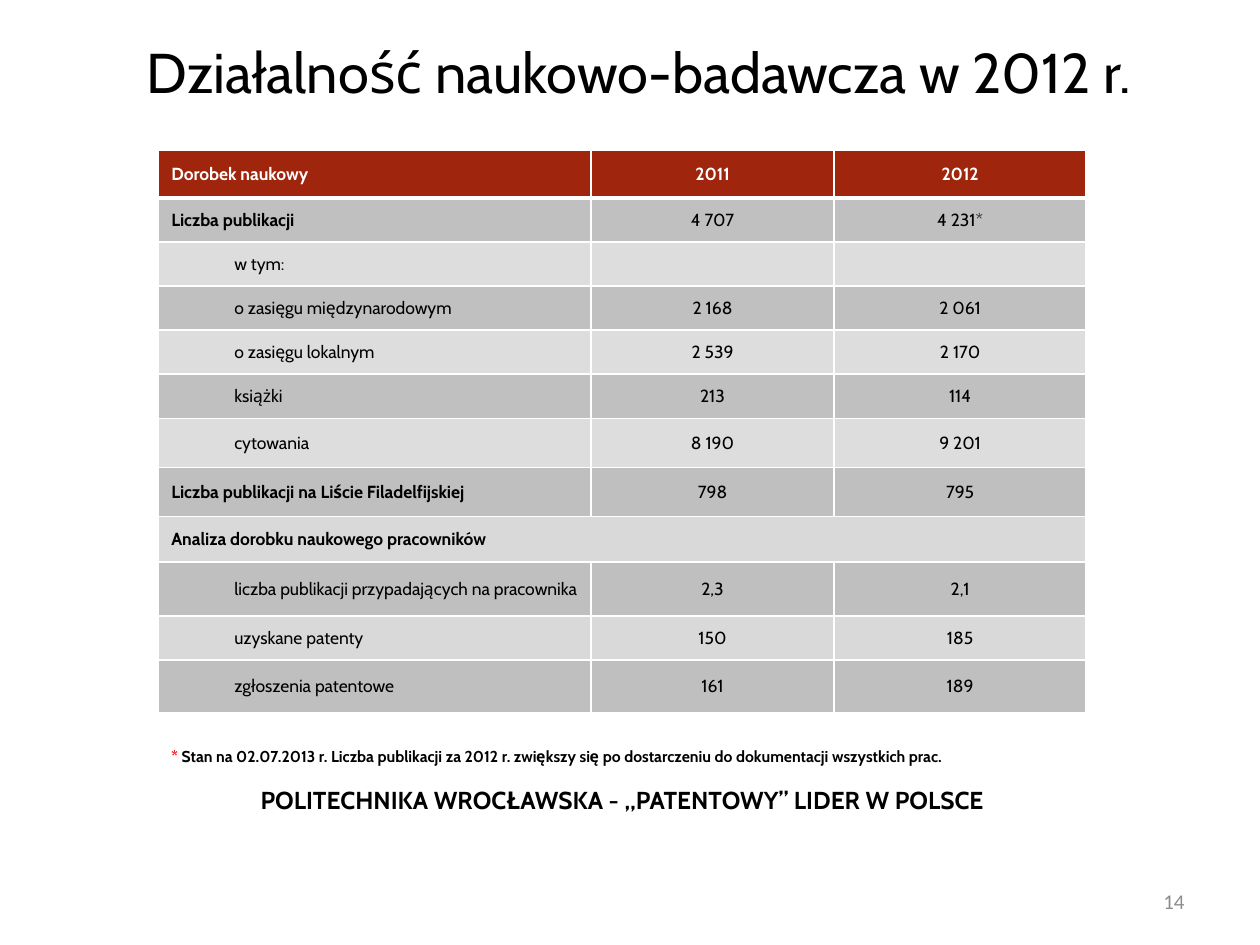
from lxml.etree import SubElement
from pptx import Presentation
from pptx.dml.color import RGBColor
from pptx.enum.text import MSO_ANCHOR as Anchor, PP_ALIGN as Align
from pptx.oxml.ns import qn
from pptx.util import Inches, Pt

BLACK = RGBColor(0, 0, 0)
WHITE = RGBColor(255, 255, 255)
RED = RGBColor(255, 0, 0)
HEADER_RED = RGBColor(0x9F, 0x25, 0x0D)
PAGE_GRAY = RGBColor(0x8C, 0x8C, 0x8C)
BANDS = RGBColor(0xC0, 0xC0, 0xC0), RGBColor(0xDD, 0xDD, 0xDD)
LOWER_BANDS = RGBColor(0xBF, 0xBF, 0xBF), RGBColor(0xD9, 0xD9, 0xD9)
LOWER_START = 7

TABLE_LEFT, TABLE_WIDTH = 1.26, 7.36
COLUMNS = 3.43, 1.93, 2
INDENT = 0.5

# height, label, 2011, 2012, indented
ROWS = [
    (0.38, "Dorobek naukowy", "2011", "2012", False),
    (0.35, "Liczba publikacji", "4 707", "4 231*", False),
    (0.35, "w tym:", "", "", True),
    (0.35, "o zasięgu międzynarodowym", "2 168", "2 061", True),
    (0.35, "o zasięgu lokalnym", "2 539", "2 170", True),
    (0.35, "książki", "213", "114", True),
    (0.39, "cytowania", "8 190", "9 201", True),
    (0.39, "Liczba publikacji na Liście Filadelfijskiej", "798", "795", False),
    (0.36, "Analiza dorobku naukowego pracowników", "", "", False),
    (0.43, "liczba publikacji przypadających na pracownika", "2,3", "2,1", True),
    (0.35, "uzyskane patenty", "150", "185", True),
    (0.42, "zgłoszenia patentowe", "161", "189", True),
]
SPANNING_ROW = 8


def add_run(paragraph, text, size, color=BLACK, bold=False, name="Cabin"):
    run = paragraph.add_run()
    run.text = text
    for attribute, value in {"size": Pt(size), "bold": bold, "name": name}.items():
        setattr(run.font, attribute, value)
    run.font.color.rgb = color


def add_text_box(slide, left, top, width, height, anchor=Anchor.TOP):
    frame = slide.shapes.add_textbox(*map(Inches, (left, top, width, height))).text_frame
    frame.word_wrap = True
    frame.vertical_anchor = anchor
    return frame


def set_borders(cell, top, bottom):
    """Draw white cell edges; widths in points. Must precede the cell's fill."""
    properties = cell._tc.get_or_add_tcPr()
    for side, width in {"L": 1, "R": 1, "T": top, "B": bottom}.items():
        line = SubElement(properties, qn(f"a:ln{side}"), w=str(Pt(width)))
        SubElement(SubElement(line, qn("a:solidFill")), qn("a:srgbClr"), val=str(WHITE))


def row_fill(row):
    if row == 0:
        return HEADER_RED
    bands = LOWER_BANDS if row >= LOWER_START else BANDS
    return bands[(row - 1) % 2]


def fill_cell(cell, row, column, text, indented):
    set_borders(cell, top=3 if row == 1 else 1, bottom=3 if row == 0 else 1)
    cell.fill.solid()
    cell.fill.fore_color.rgb = row_fill(row)
    cell.vertical_anchor = Anchor.MIDDLE
    paragraph = cell.text_frame.paragraphs[0]
    if column:
        paragraph.alignment = Align.CENTER
    elif indented:
        paragraph.level = 1
        properties = paragraph._p.get_or_add_pPr()
        properties.set("marL", str(Inches(INDENT)))
        properties.set("indent", "0")
    if text:
        bold = row == 0 or (column == 0 and not indented)
        add_run(paragraph, text, 10, BLACK if row else WHITE, bold)
    else:
        SubElement(paragraph._p, qn("a:endParaRPr"), sz="1000")


def add_results_table(slide):
    heights = [row[0] for row in ROWS]
    table = slide.shapes.add_table(
        len(ROWS), len(COLUMNS), Inches(TABLE_LEFT), Inches(1.19),
        Inches(TABLE_WIDTH), Inches(sum(heights))).table
    for column, width in zip(table.columns, COLUMNS):
        column.width = Inches(width)
    for row, (height, *texts, indented) in enumerate(ROWS):
        table.rows[row].height = Inches(height)
        for column, text in enumerate(texts):
            fill_cell(table.cell(row, column), row, column, text, indented)
    table.cell(SPANNING_ROW, 0).merge(table.cell(SPANNING_ROW, len(COLUMNS) - 1))


def add_title(slide, text):
    title = slide.shapes.title
    title.left, title.top, title.width, title.height = map(Inches, (0.66, 0.17, 8.83, 0.79))
    title.text_frame.vertical_anchor = Anchor.MIDDLE
    heading = title.text_frame.paragraphs[0]
    heading.alignment = Align.CENTER
    add_run(heading, text, 32)


def add_footnote(slide):
    frame = add_text_box(slide, TABLE_LEFT, 5.88, TABLE_WIDTH, 0.64)
    note = frame.paragraphs[0]
    add_run(note, "* ", 9, RED, bold=True)
    add_run(note, "Stan na 02.07.2013 r. Liczba publikacji za 2012 r. zwiększy się "
                  "po dostarczeniu do dokumentacji wszystkich prac.", 9, bold=True)
    slogan = frame.add_paragraph()
    slogan.alignment = Align.CENTER
    slogan.space_before = Pt(11)
    add_run(slogan, "POLITECHNIKA WROCŁAWSKA - „PATENTOWY” LIDER W POLSCE", 14, bold=True)


def add_page_number(slide, number):
    page = add_text_box(slide, 7.17, 6.95, 2.33, 0.4, Anchor.MIDDLE).paragraphs[0]
    page.alignment = Align.RIGHT
    add_run(page, number, 12, PAGE_GRAY, name="Calibri")


def main():
    presentation = Presentation()
    presentation.slide_width, presentation.slide_height = Inches(10), Inches(7.5)
    slide = presentation.slides.add_slide(presentation.slide_layouts.get_by_name("Title Only"))
    add_title(slide, "Działalność naukowo-badawcza w 2012 r.")
    add_results_table(slide)
    add_footnote(slide)
    add_page_number(slide, "14")
    presentation.save("out.pptx")


if __name__ == "__main__":
    main()
